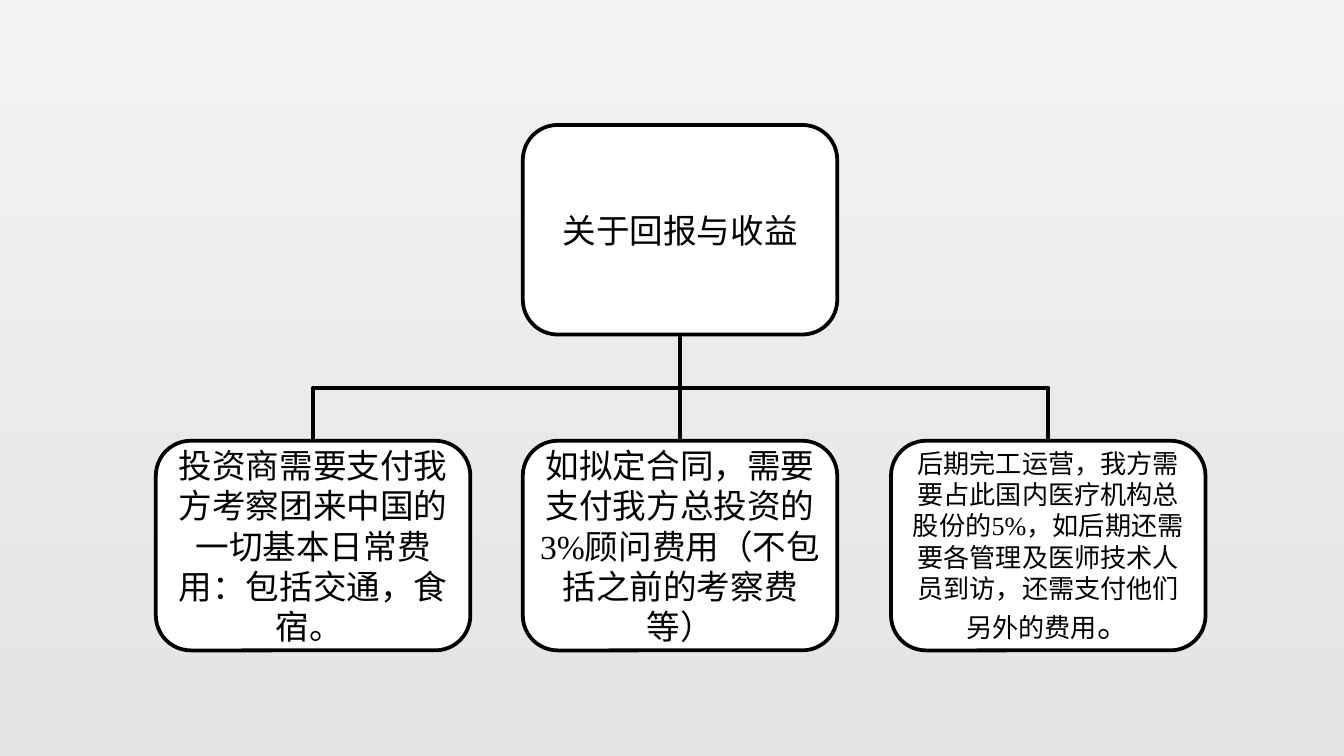
from pptx import Presentation
from pptx.dml.color import RGBColor
from pptx.enum.shapes import MSO_CONNECTOR, MSO_SHAPE
from pptx.enum.text import MSO_ANCHOR, PP_ALIGN
from pptx.oxml.ns import qn
from pptx.util import Inches, Pt
from lxml.etree import SubElement

BLACK = RGBColor(0x00, 0x00, 0x00)
WHITE = RGBColor(0xFF, 0xFF, 0xFF)
LIGHT_GRAY = RGBColor(0xF2, 0xF2, 0xF2)
WARM_GRAY = RGBColor(0xE6, 0xE4, 0xE4)
CHINESE_FONT = "Noto Sans CJK SC"
LATIN_FONT = "Times New Roman"

BOX_WIDTH, BOX_HEIGHT = 2.34, 1.56
TEXT_WIDTH = 2.19
COLUMN_LEFTS = (1.16, 3.89, 6.63)
ROOT_TOP, CHILD_TOP = 0.93, 3.28


def write_text(paragraph, text, size=18, font=CHINESE_FONT):
    run = paragraph.add_run()
    run.text = text
    run.font.size = Pt(size)
    run.font.name = font
    run.font.color.rgb = BLACK
    SubElement(run.font._element, qn("a:ea")).set("typeface", CHINESE_FONT)


presentation = Presentation()
presentation.slide_width = Inches(10)
presentation.slide_height = Inches(10) * 9 // 16
slide = presentation.slides.add_slide(presentation.slide_layouts[6])

# Background: vertical gradient
background = slide.background.fill
background.gradient()
background.gradient_angle = 270
for stop, color, position in zip(background.gradient_stops, (LIGHT_GRAY, WARM_GRAY), (0, 1)):
    stop.color.rgb = color
    stop.position = position

# Boxes: column, top, text height, runs
boxes = [
    (1, ROOT_TOP, 0.45, [("关于回报与收益", {})]),
    (0, CHILD_TOP, 1.49, [
        ("投资商需要支付我方考察团来中国的一切基本日常费用：包括交通，食宿。 ", {}),
    ]),
    (1, CHILD_TOP, 1.5, [
        ("如拟定合同，需要支付我方总投资的", {}),
        ("3%", {"font": LATIN_FONT}),
        ("顾问费用（不包括之前的考察费等）", {}),
    ]),
    (2, CHILD_TOP, 1.84, [
        ("后期完工运营，我方需要占此国内医疗机构总股份的", {"size": 14}),
        ("5%", {"size": 14, "font": LATIN_FONT}),
        ("，如后期还需要各管理及医师技术人员到访，还需支付他们另外的费用", {"size": 14}),
        ("。", {}),
    ]),
]
shapes = []
for column, top, text_height, runs in boxes:
    left = COLUMN_LEFTS[column]
    shape = slide.shapes.add_shape(MSO_SHAPE.ROUNDED_RECTANGLE, Inches(left), Inches(top),
                                   Inches(BOX_WIDTH), Inches(BOX_HEIGHT))
    shape.shadow.inherit = False
    shape.fill.solid()
    shape.fill.fore_color.rgb = WHITE
    shape.line.color.rgb = BLACK
    shape.line.width = Pt(2)
    shapes.append(shape)

    # Text centred on its box
    text_box = slide.shapes.add_textbox(
        Inches(left + (BOX_WIDTH - TEXT_WIDTH) / 2), Inches(top + (BOX_HEIGHT - text_height) / 2),
        Inches(TEXT_WIDTH), Inches(text_height))
    frame = text_box.text_frame
    frame.word_wrap = True
    frame.vertical_anchor = MSO_ANCHOR.MIDDLE
    frame.margin_left = frame.margin_right = Inches(0.05)
    frame.margin_top = frame.margin_bottom = Inches(0.05)
    paragraph = frame.paragraphs[0]
    paragraph.alignment = PP_ALIGN.CENTER
    # Keep punctuation inside the text area
    paragraph._p.get_or_add_pPr().set("hangingPunct", "0")
    for text, style in runs:
        write_text(paragraph, text, **style)

# Branches: straight to the middle child, bent to the outer ones
root, left_child, middle_child, right_child = shapes
trunk = slide.shapes.add_connector(MSO_CONNECTOR.STRAIGHT, 0, 0, 0, 0)
trunk.begin_connect(root, 2)
trunk.end_connect(middle_child, 0)
SubElement(trunk._element.spPr, qn("a:effectLst"))
branches = [trunk]

root_center = root.left + root.width // 2
root_bottom = root.top + root.height
for child in (left_child, right_child):
    child_center = child.left + child.width // 2
    bend = (root_bottom + child.top) // 2
    builder = slide.shapes.build_freeform(root_center, root_bottom)
    builder.add_line_segments([(root_center, bend), (child_center, bend),
                               (child_center, child.top)], close=False)
    branch = builder.convert_to_shape()
    branch.shadow.inherit = False
    branch.fill.background()
    branches.append(branch)

for branch in branches:
    branch.line.color.rgb = BLACK
    branch.line.width = Pt(2.25)

presentation.save("out.pptx")
